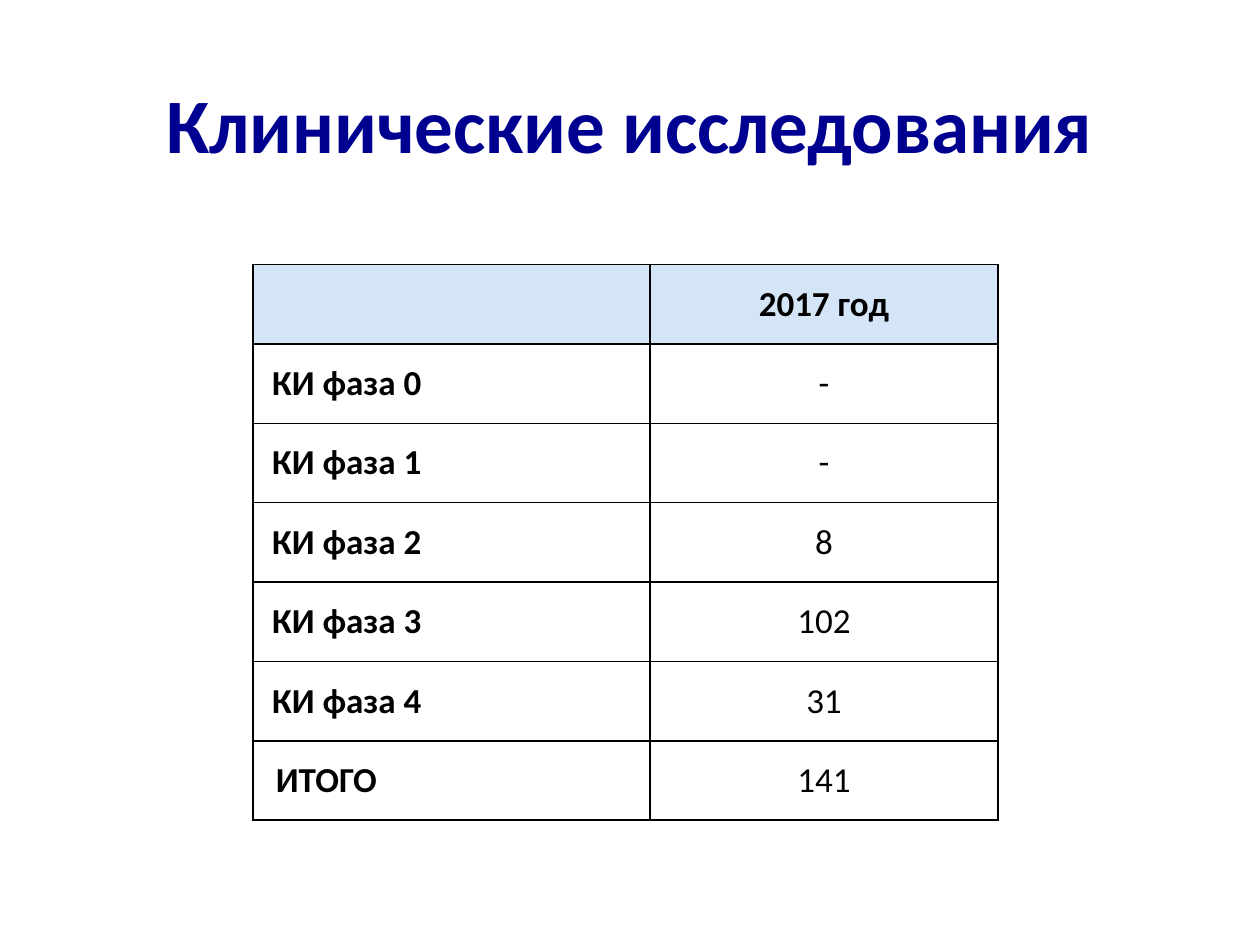
"""Build a slide with a table of clinical trials by phase."""
from dataclasses import dataclass

from lxml.etree import SubElement
from pptx import Presentation
from pptx.dml.color import RGBColor
from pptx.enum.text import MSO_ANCHOR, PP_ALIGN
from pptx.oxml.ns import qn
from pptx.util import Inches, Pt

COLORS = {"title": "000090", "text": "000000", "border": "000000", "header": "D4E5F7"}
FONT = "Calibri"
COLUMN_WIDTHS = (3.15, 2.76)
ROW_HEIGHT = 0.63
LABEL_INDENT = 0.08
WIDE_MARGINS = {"margin_left": 0.1, "margin_right": 0.1, "margin_top": 0.05, "margin_bottom": 0.05}
TIGHT_MARGINS = {"margin_left": 0.07, "margin_right": 0.07, "margin_top": 0, "margin_bottom": 0}


@dataclass(frozen=True)
class TrialRow:
    label: str
    value: str
    margins: dict
    header: bool = False


ROWS = (
    TrialRow("", "2017 год", WIDE_MARGINS, header=True),
    *(
        TrialRow(f"КИ фаза {phase}", count, TIGHT_MARGINS)
        for phase, count in enumerate(("-", "-", "8", "102", "31"))
    ),
    TrialRow("ИТОГО", "141", WIDE_MARGINS),
)


def write_text(paragraph, text: str, size: int, color: str, bold: bool, alignment) -> None:
    """Put one formatted run into a paragraph."""
    paragraph.alignment = alignment
    run = paragraph.add_run()
    run.text = text
    for name, value in {"name": FONT, "size": Pt(size), "bold": bold}.items():
        setattr(run.font, name, value)
    run.font.color.rgb = RGBColor.from_string(COLORS[color])


def add_title(slide, text: str) -> None:
    """Add the centred slide title."""
    box = slide.shapes.add_textbox(Inches(0.5), Inches(0.48), Inches(9), Inches(0.99))
    box.text_frame.word_wrap = True
    box.text_frame.vertical_anchor = MSO_ANCHOR.MIDDLE
    write_text(box.text_frame.paragraphs[0], text, 44, "title", True, PP_ALIGN.CENTER)


def add_borders(cell) -> None:
    """Draw a thin line on all four sides of a cell."""
    properties = cell._tc.get_or_add_tcPr()
    for side in ("a:lnL", "a:lnR", "a:lnT", "a:lnB"):
        line = SubElement(properties, qn(side), w=str(Pt(1)))
        fill = SubElement(line, qn("a:solidFill"))
        SubElement(fill, qn("a:srgbClr"), val=COLORS["border"])


def format_cell(cell, row: TrialRow) -> None:
    """Set the margins, anchor, borders and fill of a cell."""
    cell.vertical_anchor = MSO_ANCHOR.MIDDLE
    for name, value in row.margins.items():
        setattr(cell, name, Inches(value))
    add_borders(cell)
    if row.header:
        cell.fill.solid()
        cell.fill.fore_color.rgb = RGBColor.from_string(COLORS["header"])
    else:
        cell.fill.background()


def add_trial_table(slide, rows: tuple[TrialRow, ...]) -> None:
    """Add the table of trials."""
    table = slide.shapes.add_table(
        len(rows), len(COLUMN_WIDTHS), Inches(2.01), Inches(2.1),
        Inches(sum(COLUMN_WIDTHS)), Inches(ROW_HEIGHT * len(rows)),
    ).table
    table.horz_banding = False
    for column, width in zip(table.columns, COLUMN_WIDTHS):
        column.width = Inches(width)
    for index, row in enumerate(rows):
        table.rows[index].height = Inches(ROW_HEIGHT)
        label_cell, value_cell = table.cell(index, 0), table.cell(index, 1)
        for cell in (label_cell, value_cell):
            format_cell(cell, row)
        if row.label:
            paragraph = label_cell.text_frame.paragraphs[0]
            write_text(paragraph, row.label, 20, "text", True, PP_ALIGN.LEFT)
            paragraph._p.get_or_add_pPr().set("marL", str(Inches(LABEL_INDENT)))
        paragraph = value_cell.text_frame.paragraphs[0]
        write_text(paragraph, row.value, 20, "text", row.header, PP_ALIGN.CENTER)


def main() -> None:
    """Create and save the presentation."""
    presentation = Presentation()
    presentation.slide_width = Inches(10)
    presentation.slide_height = Inches(7.5)
    slide = presentation.slides.add_slide(presentation.slide_layouts[6])
    add_title(slide, "Клинические исследования")
    add_trial_table(slide, ROWS)
    presentation.save("out.pptx")


if __name__ == "__main__":
    main()
